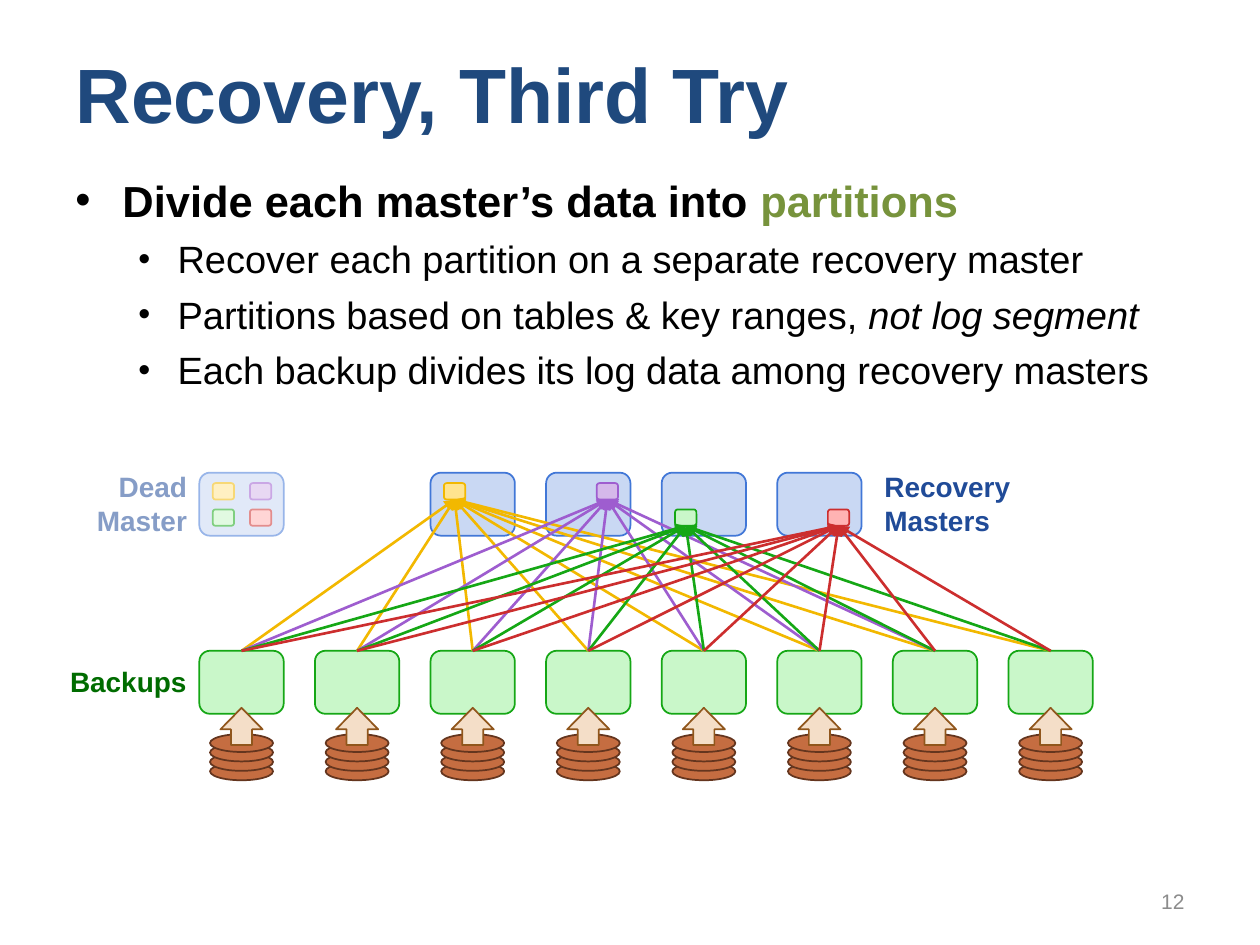
from lxml import etree
from pptx import Presentation
from pptx.dml.color import RGBColor
from pptx.enum.shapes import MSO_CONNECTOR, MSO_SHAPE
from pptx.enum.text import MSO_ANCHOR, PP_ALIGN
from pptx.oxml.ns import qn
from pptx.util import Cm, Pt

LEFT, RIGHT = PP_ALIGN.LEFT, PP_ALIGN.RIGHT
MIDDLE = MSO_ANCHOR.MIDDLE
ROUND, OVAL = MSO_SHAPE.ROUNDED_RECTANGLE, MSO_SHAPE.OVAL
ARROW, RECT = MSO_SHAPE.UP_ARROW, MSO_SHAPE.RECTANGLE
STRAIGHT = MSO_CONNECTOR.STRAIGHT

BLACK = RGBColor(0x00, 0x00, 0x00)
WHITE = RGBColor(0xFF, 0xFF, 0xFF)
GRAY = RGBColor(0x8C, 0x8C, 0x8C)
NAVY = RGBColor(0x1F, 0x49, 0x7D)
INK = RGBColor(0x20, 0x4B, 0x98)
OLIVE = RGBColor(0x77, 0x93, 0x3C)
FOREST = RGBColor(0x00, 0x6C, 0x00)

# Fill and line pairs
BLUE = RGBColor(0xC9, 0xD8, 0xF3), RGBColor(0x41, 0x77, 0xD7)
GREEN = RGBColor(0xC9, 0xF7, 0xC9), RGBColor(0x15, 0xA7, 0x15)
YELLOW = RGBColor(0xFF, 0xE4, 0x8F), RGBColor(0xF2, 0xB8, 0x00)
PURPLE = RGBColor(0xD5, 0xB8, 0xEA), RGBColor(0x9E, 0x5D, 0xCF)
RED = RGBColor(0xFF, 0xB3, 0xB3), RGBColor(0xCC, 0x2E, 0x2E)
RUST = RGBColor(0xC5, 0x6D, 0x41), RGBColor(0x64, 0x35, 0x1E)
SAND = RGBColor(0xF4, 0xDE, 0xC8), RGBColor(0x90, 0x56, 0x1C)

TITLE = "Recovery, Third Try"
# Level, then runs of text, colour, bold, italic
BULLETS = [
    (0, [("Divide each master’s data into ", BLACK, True, False),
         ("partitions", OLIVE, True, False)]),
    (1, [("Recover each partition on a separate recovery master", BLACK, False, False)]),
    (1, [("Partitions based on tables & key ranges, ", BLACK, False, False),
         ("not log segment", BLACK, False, True)]),
    (1, [("Each backup divides its log data among recovery masters", BLACK, False, False)]),
]
# Size, space before, left margin, hanging indent, bullet size in percent
LEVELS = [(24.8, 3, 0.95, 0.95, 100), (21.7, 5.6, 2.06, 0.79, 90)]
# Colours, column and row inside a master, slot of the recovery master, senders
PARTS = [(YELLOW, 0, 0, 2, 8), (PURPLE, 1, 0, 3, 7),
         (GREEN, 0, 1, 4, 8), (RED, 1, 1, 5, 8)]

SLOTS, DISKS = 8, 4
X0, PITCH = 4.02, 2.33
BOX_W, BOX_H = 1.7, 1.27
TOP_Y, LOW_Y = 9.53, 13.12
CHIP_W, CHIP_H = 0.43, 0.33
CHIP_X, CHIP_Y = (0.27, 1.02), (0.21, 0.74)
DISK_W, DISK_H, DISK_Y, DISK_GAP = 1.27, 0.36, 15.37, 0.19
PUSH_W, PUSH_H, PUSH_Y = 0.85, 0.75, 14.27

prs = Presentation()
prs.slide_width, prs.slide_height = Cm(25.4), Cm(19.05)
slide = prs.slides.add_slide(prs.slide_layouts[5])
shapes = slide.shapes


def place(x, y, w, h):
    return Cm(x), Cm(y), Cm(w), Cm(h)


def style(run, size, color, bold=False, italic=False):
    font = run.font
    font.name, font.size = "Arial", Pt(size)
    font.bold, font.italic = bold, italic
    font.color.rgb = color


def label(text, box, size, color, align=LEFT, bold=True, wrap=False):
    frame = shapes.add_textbox(*place(*box)).text_frame
    frame.word_wrap = wrap
    frame.text = text
    par = frame.paragraphs[0]
    par.alignment = align
    for run in par.runs:
        style(run, size, color, bold)
    return frame


def draw(home, kind, box, pair):
    shape = home.add_shape(kind, *place(*box))
    shape.shadow.inherit = False
    shape.fill.solid()
    shape.fill.fore_color.rgb, shape.line.color.rgb = pair
    shape.line.width = Pt(1)
    return shape


def slot(i):
    return X0 + i * PITCH


def chip(i, part):
    """Draw a partition in the master at slot i."""
    pair, col, row = part[:3]
    draw(shapes, ROUND, (slot(i) + CHIP_X[col], TOP_Y + CHIP_Y[row], CHIP_W, CHIP_H), pair)


def master(i):
    draw(shapes, ROUND, (slot(i), TOP_Y, BOX_W, BOX_H), BLUE)


def backup(i):
    home = shapes.add_group_shape().shapes
    mid = slot(i) + BOX_W / 2
    for k in range(DISKS):
        draw(home, OVAL, (mid - DISK_W / 2, DISK_Y - k * DISK_GAP, DISK_W, DISK_H), RUST)
    draw(home, ROUND, (slot(i), LOW_Y, BOX_W, BOX_H), GREEN)
    push = draw(home, ARROW, (mid - PUSH_W / 2, PUSH_Y, PUSH_W, PUSH_H), SAND)
    push.adjustments[1] = 0.58


def send(i, part):
    """Draw the arrow from backup i to the partition's recovery master."""
    pair, col, row, goal = part[:4]
    tip = slot(goal) + CHIP_X[col] + CHIP_W / 2, TOP_Y + CHIP_Y[row] + CHIP_H
    wire = shapes.add_connector(STRAIGHT, Cm(slot(i) + BOX_W / 2), Cm(LOW_Y), *map(Cm, tip))
    wire.line.color.rgb, wire.line.width = pair[1], Pt(1.5)
    etree.SubElement(wire.line._get_or_add_ln(), qn("a:tailEnd"), type="triangle")
    etree.SubElement(wire._element.spPr, qn("a:effectLst"))


def bullets():
    frame = shapes.add_textbox(*place(1.27, 3.38, 22.86, 5.28)).text_frame
    frame.word_wrap = True
    for n, (level, runs) in enumerate(BULLETS):
        size, before, margin, hang, scale = LEVELS[level]
        par = frame.add_paragraph() if n else frame.paragraphs[0]
        par.level, par.space_before = level, Pt(before)
        props = par._p.get_or_add_pPr()
        props.set("marL", str(Cm(margin)))
        props.set("indent", str(-Cm(hang)))
        etree.SubElement(props, qn("a:buSzPct"), val=str(scale * 1000))
        etree.SubElement(props, qn("a:buFont"), typeface="Arial")
        etree.SubElement(props, qn("a:buChar"), char="•")
        for text, *look in runs:
            run = par.add_run()
            run.text = text
            style(run, size, *look)


title = shapes.title
title.left, title.top, title.width, title.height = place(1.27, 0.76, 22.86, 2.21)
title.text_frame.text = TITLE
title.text_frame.vertical_anchor = MIDDLE
title.text_frame.paragraphs[0].alignment = LEFT
style(title.text_frame.paragraphs[0].runs[0], 44, NAVY, True)

bullets()
number = label("12", (18.21, 17.65, 5.92, 1.02), 12, GRAY, RIGHT, False, True)
number.vertical_anchor = MIDDLE
label("Recovery\vMasters", (17.58, 9.35, 3.07, 1.63), 16, INK)
label("Backups", (1.14, 13.28, 2.87, 0.94), 16, FOREST, RIGHT)

for i in range(SLOTS):
    backup(i)
master(0)
for part in PARTS:
    chip(0, part)
for part in PARTS:
    master(part[3])
    chip(part[3], part)
for part in PARTS:
    for i in range(part[4]):
        send(i, part)

label("Dead\vMaster", (1.66, 9.35, 2.36, 1.63), 16, INK, RIGHT)
veil = draw(shapes, RECT, (1.68, 9.09, 4.47, 2.11), (WHITE, WHITE))
veil.line.fill.background()
tint = veil._element.spPr.find(qn("a:solidFill"))[0]
etree.SubElement(tint, qn("a:alpha"), val="46000")

prs.save("out.pptx")
